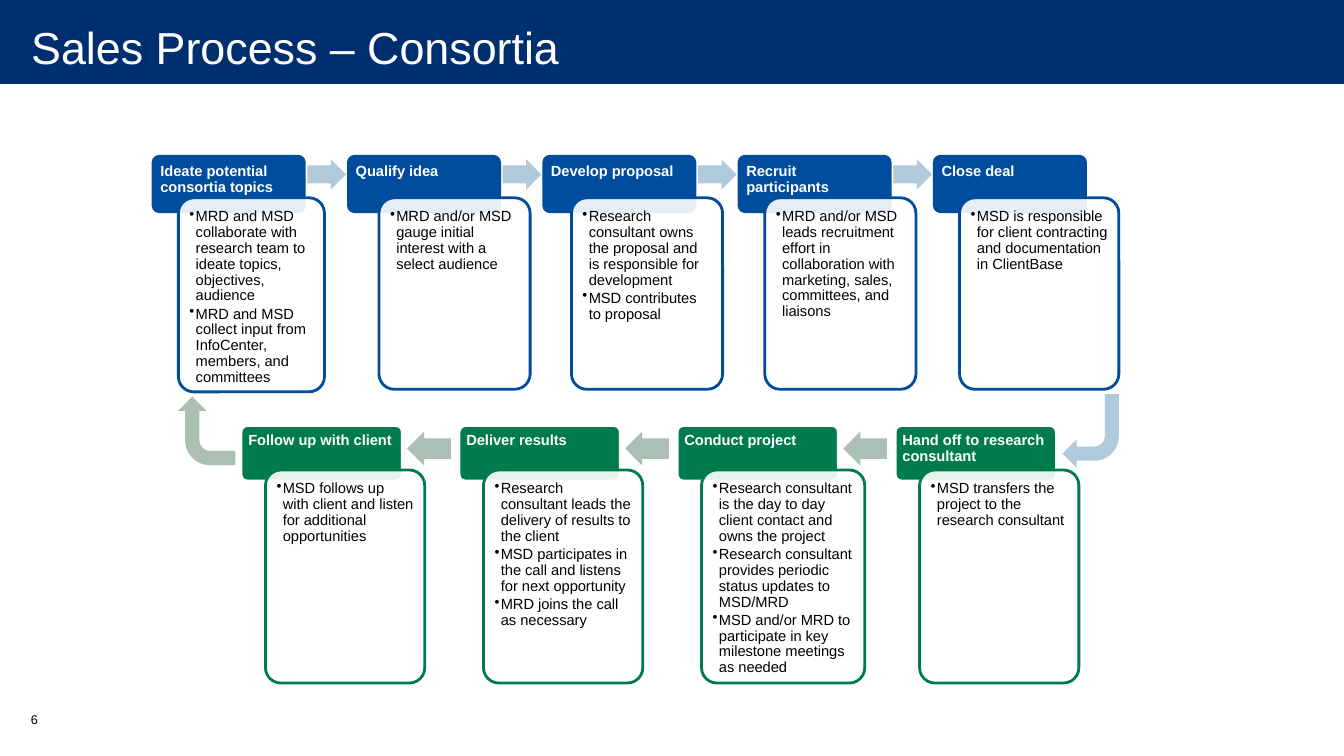
"""Build the consortia sales process slide."""
import pptx
import pptx.util
import pptx.dml.color
import pptx.enum.shapes
import pptx.enum.text
import pptx.oxml
import pptx.oxml.ns

Pt = pptx.util.Pt
RGB = pptx.dml.color.RGBColor
KIND = pptx.enum.shapes.MSO_SHAPE
ANCHOR = pptx.enum.text.MSO_ANCHOR
ALIGN = pptx.enum.text.PP_ALIGN
NAVY = RGB(0x00, 0x2F, 0x70)
BLUE = RGB(0x00, 0x4C, 0x9D)
GREEN = RGB(0x00, 0x7B, 0x4E)
SKY = RGB(0xB0, 0xCA, 0xDB)
SAGE = RGB(0xAB, 0xBF, 0xB2)
WHITE = RGB(0xFF, 0xFF, 0xFF)
BLACK = RGB(0x00, 0x00, 0x00)

TITLE = "Sales Process – Consortia"
PAGE = "6"

# Each step: heading, body offset, body width, body height, bullets
SALE = [
    ("Ideate potential consortia topics", 18, 104.4, 138.6, [
        "MRD and MSD collaborate with research team to ideate topics, objectives, audience",
        "MRD and MSD collect input from InfoCenter, members, and committees"]),
    ("Qualify idea", 21.8, 108, 136.8, [
        "MRD and/or MSD gauge initial interest with a select audience"]),
    ("Develop proposal", 19.8, 108, 136.8, [
        "Research consultant owns the proposal and is responsible for development",
        "MSD contributes to proposal"]),
    ("Recruit participants", 18.4, 108, 136.8, [
        "MRD and/or MSD leads recruitment effort in collaboration with marketing, "
        "sales, committees, and liaisons"]),
    ("Close deal", 18, 113.8, 136.8, [
        "MSD is responsible for client contracting and documentation in ClientBase"]),
]
WORK = [
    ("Follow up with client", 17.4, 113.8, 152.2, [
        "MSD follows up with client and listen for additional opportunities"]),
    ("Deliver results", 17.4, 113.8, 152.2, [
        "Research consultant leads the delivery of results to the client",
        "MSD participates in the call and listens for next opportunity",
        "MRD joins the call as necessary"]),
    ("Conduct project", 17.4, 116.6, 152.2, [
        "Research consultant is the day to day client contact and owns the project",
        "Research consultant provides periodic status updates to MSD/MRD",
        "MSD and/or MRD to participate in key milestone meetings as needed"]),
    ("Hand off to research consultant", 17.4, 113.8, 152.2, [
        "MSD transfers the project to the research consultant"]),
]
ROWS = [
    dict(steps=SALE, left=109.4, top=111.6, pitch=139.5, wide=108, drop=29.7,
         color=BLUE, edge=BLUE, kind=KIND.RIGHT_ARROW, tint=SKY,
         arrow=(110.2, 2.2, 27.6, 21.6)),
    dict(steps=WORK, left=172.2, top=304, pitch=155.75, wide=115.2, drop=31.7,
         color=GREEN, edge=WHITE, kind=KIND.LEFT_ARROW, tint=SAGE,
         arrow=(118.6, 4.2, 31.2, 24.4)),
]
BENDS = [((123.1, 287.3, 49, 41), 270, SAGE), ((758.9, 281.5, 40.3, 52.6), 180, SKY)]


def draw(slide, kind, box, fill, edge=None):
    """Add a flat shape."""
    shape = slide.shapes.add_shape(kind, *map(Pt, box))
    shape.shadow.inherit = False
    shape.fill.solid()
    shape.fill.fore_color.rgb = fill
    if edge is None:
        shape.line.fill.background()
    else:
        shape.line.color.rgb = edge
        shape.line.width = Pt(2)
    return shape


def style(run, size, color, bold=False):
    """Set the font of a run."""
    run.font.name = "Arial"
    run.font.size = Pt(size)
    run.font.bold = bold
    run.font.color.rgb = color


def pad(frame, left, top, right, low):
    """Set the insets of a text frame."""
    frame.margin_left, frame.margin_top = Pt(left), Pt(top)
    frame.margin_right, frame.margin_bottom = Pt(right), Pt(low)


def card(slide, box, fill, edge, curve, gap, lines, ink, head):
    """Add a rounded card with its heading or bullets."""
    shape = draw(slide, KIND.ROUNDED_RECTANGLE, box, fill, edge)
    shape.adjustments[0] = curve / min(box[2:])
    frame = shape.text_frame
    frame.word_wrap = True
    frame.vertical_anchor = ANCHOR.TOP
    inset = gap - 0.29 * curve
    pad(frame, inset, inset, inset, inset)
    for i, line in enumerate(lines):
        para = frame.paragraphs[0] if i == 0 else frame.add_paragraph()
        para.alignment = ALIGN.LEFT
        para.line_spacing = 0.9
        para.space_after = Pt(3.7 if head else 1.6)
        if not head:
            para.level = 1
            props = para._p.get_or_add_pPr()
            props.set("marL", str(Pt(4.5)))
            props.set("indent", str(-Pt(4.5)))
            mark = pptx.oxml.parse_xml(
                '<a:buChar %s char="•"/>' % pptx.oxml.ns.nsdecls("a"))
            props.append(mark)
        run = para.add_run()
        run.text = line
        style(run, 10.5, ink, head)
    return shape


def flow(slide, row):
    """Add one row of steps with the arrows between them."""
    top = row["top"]
    dx, dy, wide, high = row["arrow"]
    for i, (name, shift, width, height, lines) in enumerate(row["steps"]):
        left = row["left"] + i * row["pitch"]
        card(slide, (left, top, row["wide"], 39.6), row["color"], row["edge"],
             4.4, 5.2, [name], WHITE, True)
        body = card(slide, (left + shift, top + row["drop"], width, height),
                    WHITE, row["color"], 11, 7.9, lines, BLACK, False)
        tone = body.fill._xPr.find(".//" + pptx.oxml.ns.qn("a:srgbClr"))
        tone.append(pptx.oxml.parse_xml(
            '<a:alpha %s val="90000"/>' % pptx.oxml.ns.nsdecls("a")))
        if i < len(row["steps"]) - 1:
            arrow = draw(slide, row["kind"], (left + dx, top + dy, wide, high), row["tint"])
            arrow.adjustments[0] = 0.6


def main():
    """Build and save the slide."""
    deck = pptx.Presentation()
    deck.slide_width, deck.slide_height = Pt(960), Pt(540)
    slide = deck.slides.add_slide(deck.slide_layouts[5])
    bar = draw(slide, KIND.RECTANGLE, (0, -2, 960, 62), NAVY)
    title = slide.shapes.title
    title._element.addprevious(bar._element)
    title.left, title.top, title.width, title.height = Pt(0.7), Pt(-2), Pt(959.3), Pt(70)
    frame = title.text_frame
    frame.word_wrap = True
    frame.auto_size = pptx.enum.text.MSO_AUTO_SIZE.NONE
    frame.vertical_anchor = ANCHOR.MIDDLE
    pad(frame, 21.6, 0, 14.4, 0)
    frame.paragraphs[0].alignment = ALIGN.LEFT
    run = frame.paragraphs[0].add_run()
    run.text = TITLE
    style(run, 32, WHITE)
    note = slide.shapes.add_textbox(Pt(15), Pt(504.8), Pt(35.3), Pt(28.8))
    note.text_frame.word_wrap = True
    run = note.text_frame.paragraphs[0].add_run()
    run.text = PAGE
    style(run, 9, BLACK)
    for row in ROWS:
        flow(slide, row)
    for box, turn, tint in BENDS:
        draw(slide, KIND.BENT_ARROW, box, tint).rotation = turn
    deck.save("out.pptx")


if __name__ == "__main__":
    main()
